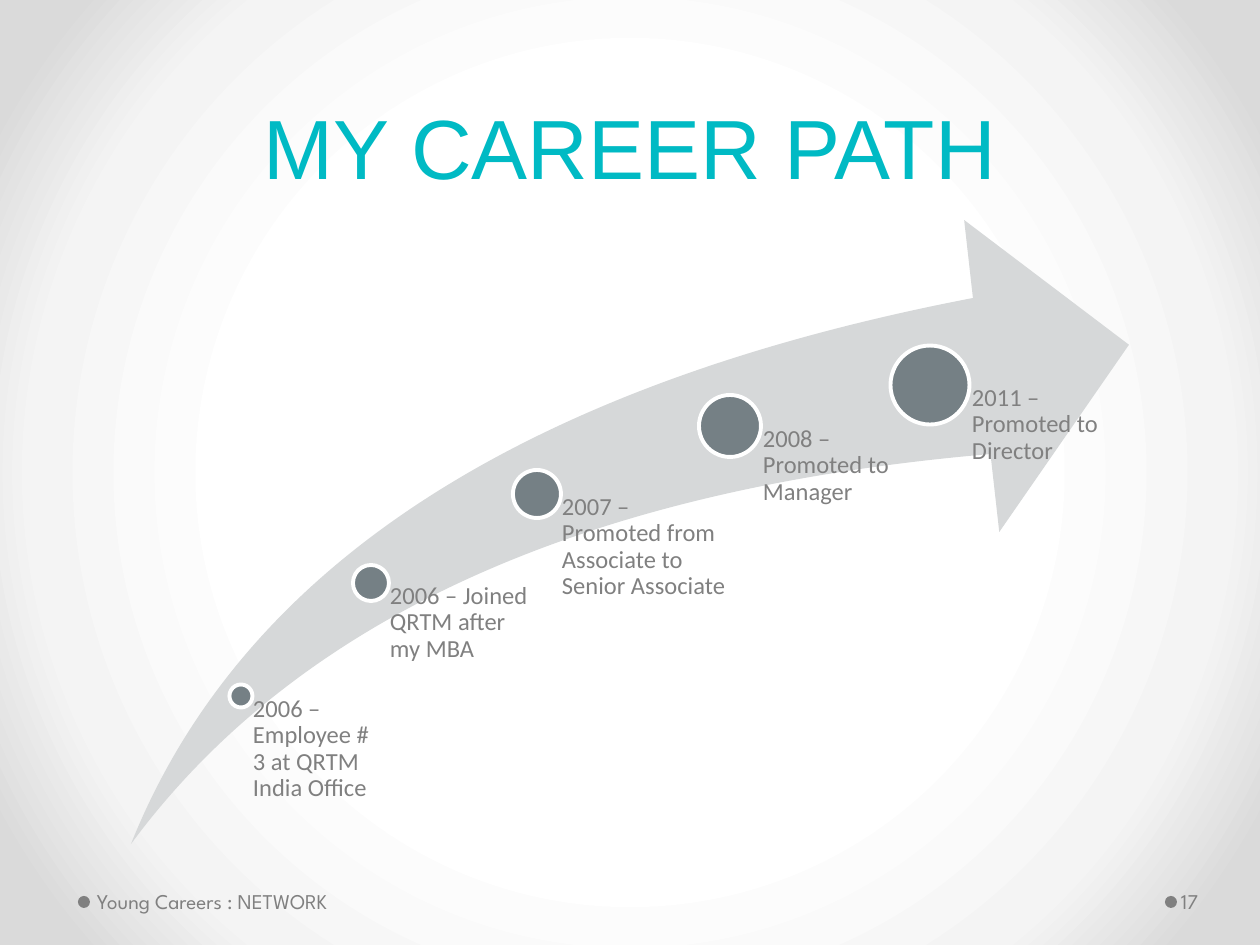
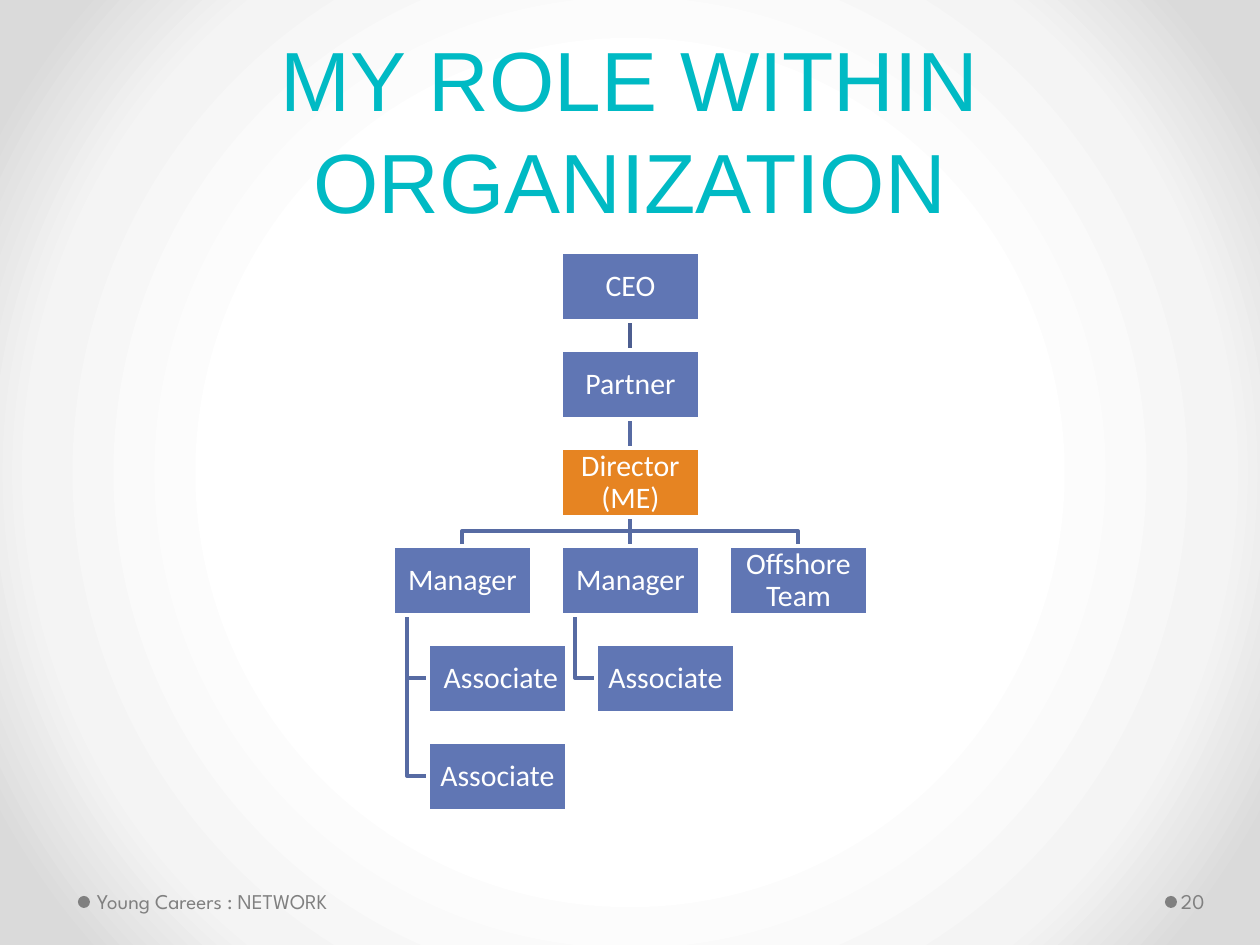
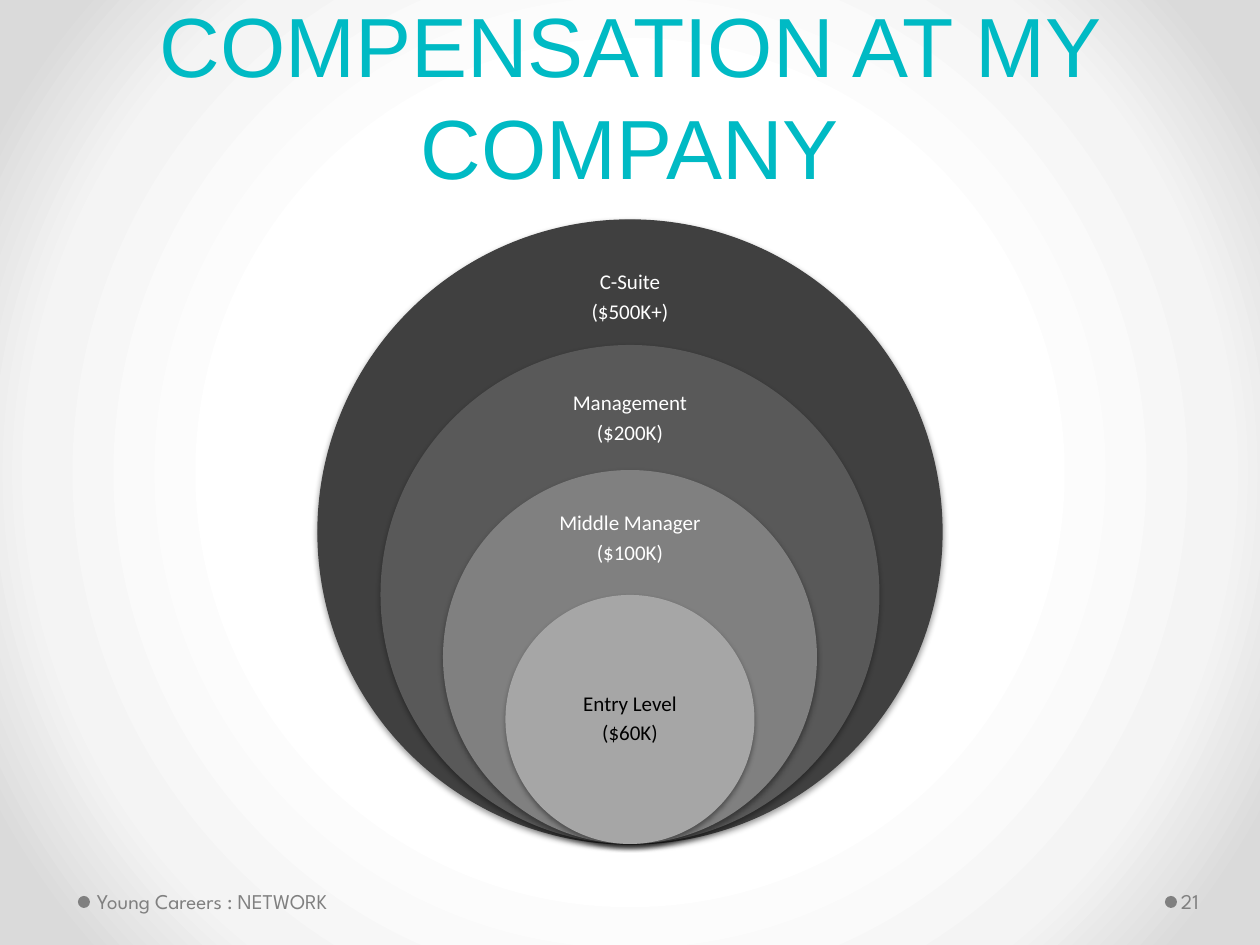
from lxml.etree import SubElement
from pptx import Presentation
from pptx.dml.color import RGBColor
from pptx.enum.shapes import MSO_CONNECTOR as Wire, MSO_SHAPE as Kind
from pptx.enum.text import MSO_ANCHOR as Anchor, MSO_AUTO_SIZE as Fit, PP_ALIGN as Align
from pptx.oxml import parse_xml
from pptx.oxml.ns import nsdecls, qn
from pptx.util import Emu, Pt

UNIT = 914400 / 126
WIDE, HIGH = 1260, 945
BASE = 844  # bottom edge of the diagrams

TEAL = RGBColor(0x00, 0xBA, 0xC4)
GRAY = RGBColor(0x80, 0x80, 0x80)
SILVER = RGBColor(0xD6, 0xD8, 0xD9)
SLATE = RGBColor(0x75, 0x80, 0x85)
BLUE = RGBColor(0x60, 0x76, 0xB4)
NAVY = RGBColor(0x57, 0x6B, 0xA3)
DEEP = RGBColor(0x4D, 0x5E, 0x90)
ORANGE = RGBColor(0xE6, 0x84, 0x22)
WHITE = RGBColor(0xFF, 0xFF, 0xFF)
BLACK = RGBColor(0x00, 0x00, 0x00)
COAL = RGBColor(0x40, 0x40, 0x40)
IRON = RGBColor(0x59, 0x59, 0x59)
ASH = RGBColor(0xA6, 0xA6, 0xA6)

HEAD, BODY, FOOT = "Arial", "Calibri", "League Spartan"
GLOW = [(50, "FFFFFF"), (76, "F4F4F4"), (92, "DADADA")]

# centre x, centre y, dot size, label width, label
STEPS = [
    (241, 696, 23, 131, "2006 – Employee # 3 at QRTM India Office"),
    (371, 583, 36, 165, "2006 – Joined QRTM after my MBA"),
    (537, 494, 48, 193, "2007 – Promoted from Associate to Senior Associate"),
    (730, 426, 62, 199, "2008 – Promoted to Manager"),
    (930, 385, 79, 199, "2011 – Promoted to Director"),
]

# column, row, indented, label, fill
ROLES = [
    (1, 0, False, "CEO", BLUE),
    (1, 1, False, "Partner", BLUE),
    (1, 2, False, "Director (ME)", ORANGE),
    (0, 3, False, "Manager", BLUE),
    (0, 4, True, " Associate", BLUE),
    (0, 5, True, "Associate", BLUE),
    (1, 3, False, "Manager", BLUE),
    (1, 4, True, "Associate", BLUE),
    (2, 3, False, "Offshore Team", BLUE),
]
BOX_W, BOX_H = 139, 69
COL, ROW = 168, 98
INDENT, STEM = 35, 14

# label, label centre below the ring top, fill, text colour
RINGS = [
    ("C-Suite\n($500K+)", 78, COAL, WHITE),
    ("Management\n($200K)", 74, IRON, WHITE),
    ("Middle Manager\n($100K)", 69, GRAY, WHITE),
    ("Entry Level\n($60K)", 124, ASH, BLACK),
]


def px(n):
    return Emu(round(n * UNIT))


def write(frame, text, size, color, font=BODY, align=Align.LEFT,
          anchor=Anchor.MIDDLE, pad=(0, 0, 0, 0), gap=0.9, after=0):
    """Fill a text frame; pad is left, top, right, bottom in px."""
    frame.text = text
    frame.word_wrap = True
    frame.auto_size = Fit.NONE
    frame.vertical_anchor = anchor
    (frame.margin_left, frame.margin_top,
     frame.margin_right, frame.margin_bottom) = map(px, pad)
    for para in frame.paragraphs:
        para.alignment = align
        para.line_spacing = gap
        para.space_after = Pt(after)
        for run in para.runs:
            run.font.size = Pt(size)
            run.font.name = font
            run.font.color.rgb = color


def label(slide, x, y, w, h, text, size, color, **style):
    box = slide.shapes.add_textbox(px(x), px(y), px(w), px(h))
    write(box.text_frame, text, size, color, **style)


def shape(slide, kind, x, y, w, h, fill, edge=None, width=2.25):
    item = slide.shapes.add_shape(kind, px(x), px(y), px(w), px(h))
    item.fill.solid()
    item.fill.fore_color.rgb = fill
    if edge is None:
        item.line.fill.background()
    else:
        item.line.color.rgb = edge
        item.line.width = Pt(width)
    item.shadow.inherit = False
    return item


def shade(item):
    """Give a shape a soft shadow straight below it."""
    effects = item.element.spPr.find(qn("a:effectLst"))
    cast = SubElement(effects, qn("a:outerShdw"), blurRad=str(Pt(3.1)),
                      dist=str(Pt(1.6)), dir="5400000", rotWithShape="0")
    tint = SubElement(cast, qn("a:srgbClr"), val=str(BLACK))
    SubElement(tint, qn("a:alpha"), val="38000")


def link(slide, points, color=NAVY):
    """Join points by a straight line or a bent one."""
    if len(points) == 2:
        (x1, y1), (x2, y2) = points
        line = slide.shapes.add_connector(
            Wire.STRAIGHT, px(x1), px(y1), px(x2), px(y2))
    else:
        path = slide.shapes.build_freeform(*points[0], scale=UNIT)
        path.add_line_segments(points[1:], close=False)
        line = path.convert_to_shape()
        line.fill.background()
    line.line.color.rgb = color
    line.line.width = Pt(2.25)
    SubElement(line.element.spPr, qn("a:effectLst"))


def paint(master):
    """Set the radial background that all slides share."""
    master.background.fill.solid()
    back = master.element.find(".//" + qn("p:bgPr"))
    stops = "".join(f'<a:gs pos="{pos}000"><a:srgbClr val="{tone}"/></a:gs>'
                    for pos, tone in GLOW)
    back.replace(back[0], parse_xml(
        f'<a:gradFill {nsdecls("a")} rotWithShape="1"><a:gsLst>{stops}</a:gsLst>'
        '<a:path path="circle"><a:fillToRect l="50000" t="50000" r="50000" b="50000"/>'
        '</a:path></a:gradFill>'))


def start(deck, title, page, top=19):
    """Add a slide with its title, footer and page number."""
    slide = deck.slides.add_slide(deck.slide_layouts[5])
    head = slide.shapes.title
    head.left, head.top, head.width, head.height = map(px, (63, top, 1134, 183))
    write(head.text_frame, title, 48, TEAL, HEAD, Align.CENTER,
          Anchor.BOTTOM, (13, 6, 13, 6), Pt(58))
    for x in (1165, 78):
        shape(slide, Kind.OVAL, x, 896, 12, 12, GRAY)
    label(slide, 91, 876, 392, 50, "Young Careers : NETWORK", 12, GRAY,
          font=FOOT, pad=(6, 6, 13, 6), gap=1.0)
    label(slide, 1177, 876, 77, 50, str(page), 12, GRAY,
          font=FOOT, pad=(4, 6, 6, 6), gap=1.0)
    return slide


def career(deck):
    slide = start(deck, "MY CAREER PATH", 17)
    arrow = shape(slide, Kind.SWOOSH_ARROW, 131, 220, 998, 624, SILVER)
    arrow.adjustments[0] = arrow.adjustments[1] = 0.25
    for x, y, size, width, text in STEPS:
        shape(slide, Kind.OVAL, x - size / 2, y - size / 2, size, size, SLATE, WHITE)
        label(slide, x, y, width, BASE - y, text, 14, GRAY,
              anchor=Anchor.TOP, pad=(round(size * 0.53), 0, 0, 0))


def spot(col, row, indented=False):
    """Left and top of a role's box."""
    return 393 + col * COL + indented * INDENT, 252 + row * ROW


def drop(slide, col, row, color=NAVY):
    """Link a middle-column box to the box in the next row."""
    x, y = spot(1, row)
    x, y = x + BOX_W // 2, y + BOX_H
    end = spot(col, row + 1)
    foot = end[0] + BOX_W // 2
    if col == 1:
        link(slide, [(x, y), (x, end[1])], color)
    else:
        mid = (y + end[1]) // 2
        link(slide, [(x, y), (x, mid), (foot, mid), (foot, end[1])], color)


def hang(slide, col, row):
    """Link a manager to an indented box below."""
    x, y = spot(col, 3)
    left, top = spot(col, row, True)
    mid = top + BOX_H // 2
    link(slide, [(x + STEM, y + BOX_H), (x + STEM, mid), (left, mid)])


def chart(deck):
    slide = start(deck, "MY ROLE WITHIN ORGANIZATION", 20, top=53)
    for col in (2, 1, 0):
        drop(slide, col, 2)
    for col, row in ((1, 4), (0, 5), (0, 4)):
        hang(slide, col, row)
    drop(slide, 1, 1)
    drop(slide, 1, 0, DEEP)
    for col, row, indented, text, fill in ROLES:
        x, y = spot(col, row, indented)
        box = shape(slide, Kind.RECTANGLE, x, y, BOX_W, BOX_H, fill, WHITE)
        write(box.text_frame, text, 17, WHITE, align=Align.CENTER, pad=(1, 1, 1, 1))


def pay(deck):
    slide = start(deck, "COMPENSATION AT MY COMPANY", 21)
    for rank, (text, mid, fill, color) in enumerate(RINGS):
        size = 624 - 125 * rank
        top = BASE - size
        edge = COAL if rank == 0 else None
        shade(shape(slide, Kind.OVAL, (WIDE - size) / 2, top, size, size,
                    fill, edge, 0.75))
        label(slide, WIDE / 2 - 100, top + mid - 35, 200, 70, text, 12, color,
              align=Align.CENTER, after=4)


def main():
    deck = Presentation()
    deck.slide_width, deck.slide_height = px(WIDE), px(HIGH)
    paint(deck.slide_master)
    career(deck)
    chart(deck)
    pay(deck)
    deck.save("out.pptx")


if __name__ == "__main__":
    main()
